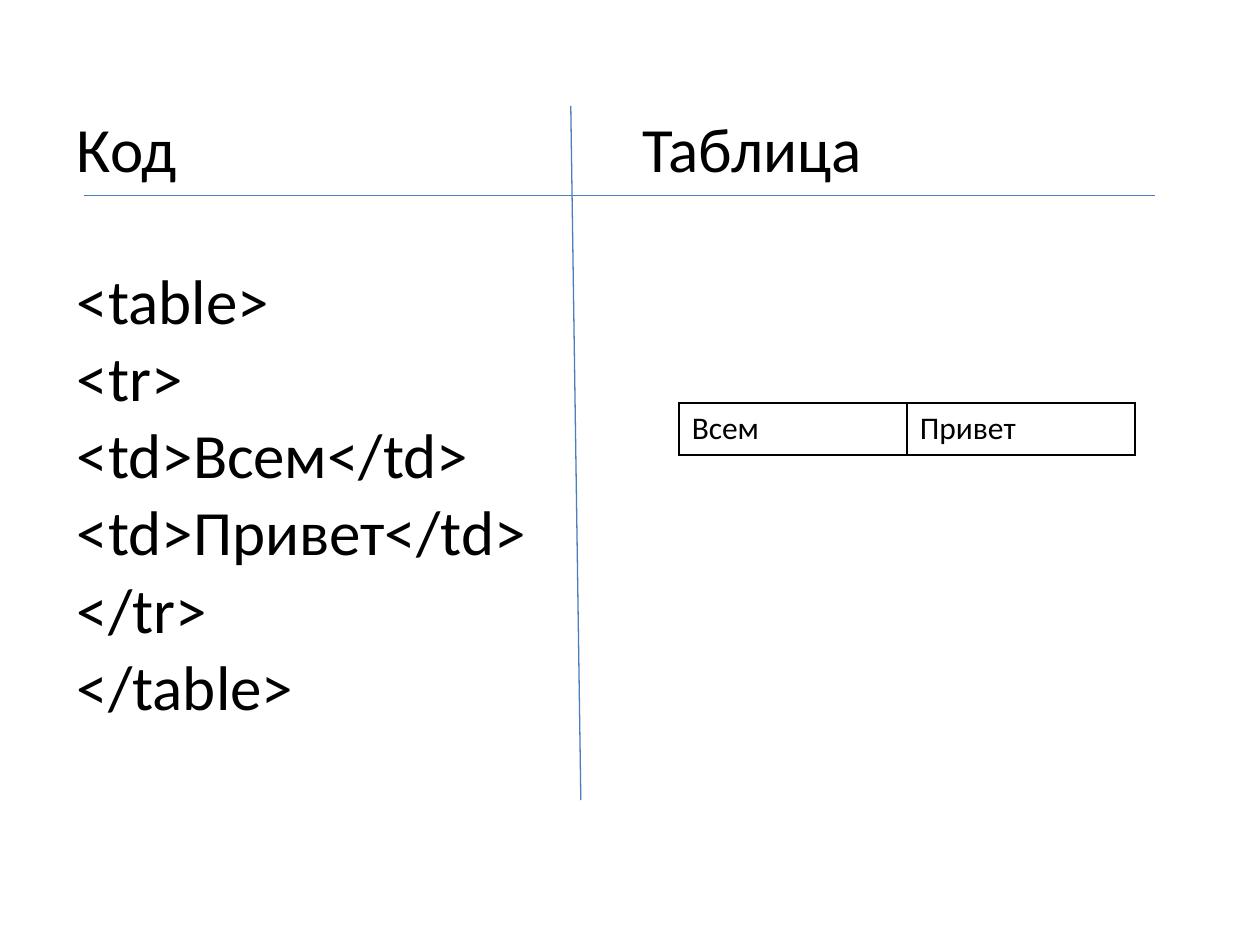
import pptx
import pptx.dml.color
import pptx.enum.shapes
import pptx.oxml
import pptx.oxml.ns
import pptx.util
from pptx.util import Inches

COLORS = {"text": "000000", "border": "000000", "rule": "4B7EBC"}
CODE = ["<table>", "<tr>", "<td>Всем</td>", "<td>Привет</td>", "</tr>", "</table>"]


def tint(name):
    """Return the named colour."""
    return pptx.dml.color.RGBColor.from_string(COLORS[name])


def edge(cell, width):
    """Draw a solid border on every side of a cell."""
    props = cell._tc.get_or_add_tcPr()
    for side in ("lnL", "lnR", "lnT", "lnB"):
        props.append(pptx.oxml.parse_xml(
            f'<a:{side} {pptx.oxml.ns.nsdecls("a")} w="{pptx.util.Pt(width)}">'
            f'<a:solidFill><a:srgbClr val="{COLORS["border"]}"/></a:solidFill></a:{side}>'))


def write(cell, text, size):
    """Put text in a cell and format its paragraphs."""
    cell.text = text
    for para in cell.text_frame.paragraphs:
        form = {"name": "Calibri", "size": pptx.util.Pt(size), "bold": False}
        for key, value in form.items():
            setattr(para.font, key, value)
        para.font.color.rgb = tint("text")


def grid(slide, box, rows, tall, size, border=0):
    """Place a plain table in a box, with columns of equal width."""
    left, top, width, height = map(Inches, box)
    table = slide.shapes.add_table(len(rows), len(rows[0]), left, top, width, height).table
    for key in ("first_row", "horz_banding"):
        setattr(table, key, False)
    for line, high in zip(table.rows, tall):
        line.height = Inches(high)
    for line, texts in zip(table.rows, rows):
        for cell, text in zip(line.cells, texts):
            write(cell, text, size)
            if border:
                edge(cell, border)
            cell.fill.background()


def rule(slide, start, end):
    """Draw a thin line between two points."""
    line = slide.shapes.add_connector(
        pptx.enum.shapes.MSO_CONNECTOR.STRAIGHT, *map(Inches, start + end))
    line.line.color.rgb = tint("rule")
    line.line.width = pptx.util.Pt(0.75)
    line._element.spPr.append(
        pptx.oxml.parse_xml(f'<a:effectLst {pptx.oxml.ns.nsdecls("a")}/>'))


def cross(slide, box):
    """Divide the box with a level rule and a slightly tilted upright one."""
    left, top, width, height = box
    level = top + 0.71
    rule(slide, (left + 0.16, level), (left + width - 0.32, level))
    rule(slide, (left + 4.02, top), (left + 4.1, top + height))


def main():
    """Build and save the slide."""
    deck = pptx.Presentation()
    deck.slide_width, deck.slide_height = Inches(10), Inches(7.5)
    slide = deck.slides.add_slide(deck.slide_layouts[6])
    box = (0.51, 0.84, 8.98, 5.51)
    grid(slide, box, [["Код", "Таблица"], ["\n".join(CODE), ""]], [1.21, 4.3], 36)
    grid(slide, (5.39, 3.2, 3.62, 0.41), [["Всем", "Привет"]], [0.41], 18, border=1)
    cross(slide, box)
    deck.save("out.pptx")


if __name__ == "__main__":
    main()
